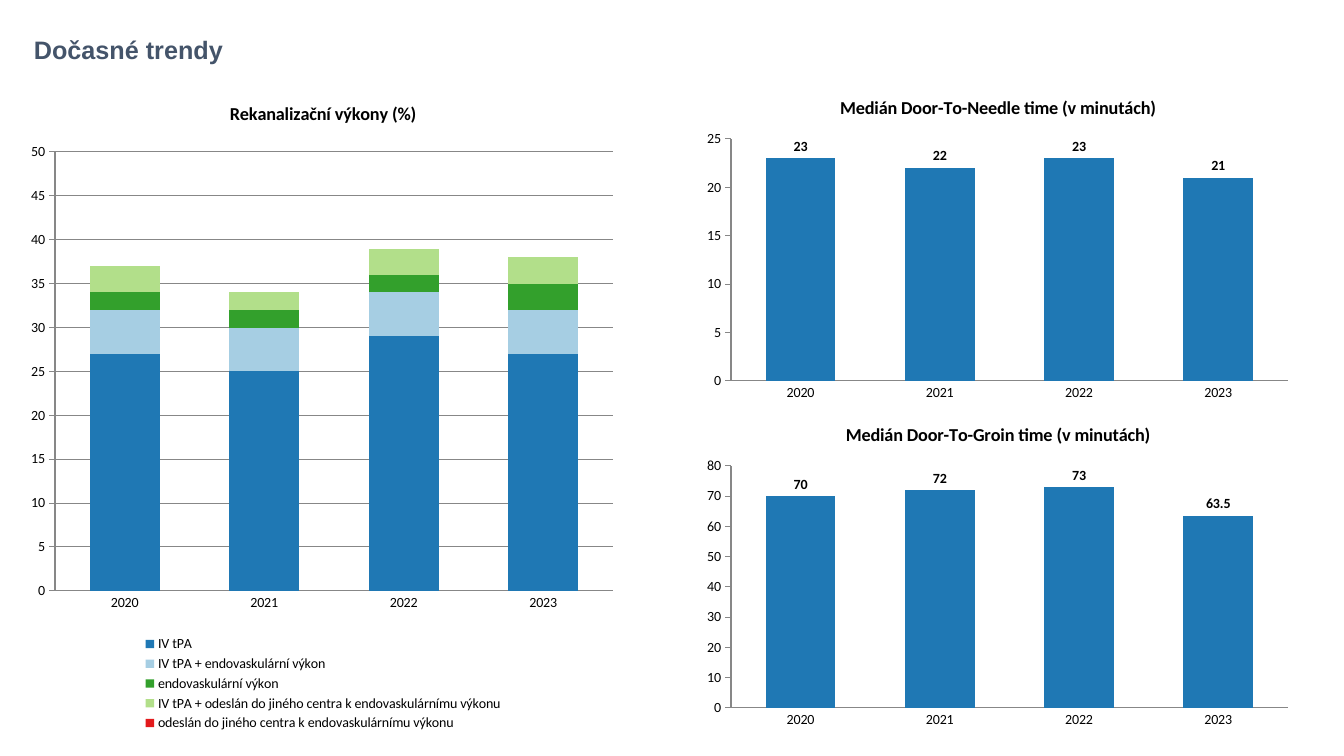
from lxml import etree
from pptx import Presentation
from pptx.chart.data import CategoryChartData
from pptx.dml.color import RGBColor
from pptx.enum.chart import XL_CHART_TYPE, XL_LABEL_POSITION, XL_LEGEND_POSITION, XL_TICK_MARK
from pptx.enum.text import MSO_ANCHOR
from pptx.oxml.ns import qn
from pptx.util import Pt

STACKED = XL_CHART_TYPE.COLUMN_STACKED
CLUSTERED = XL_CHART_TYPE.COLUMN_CLUSTERED
OUTSIDE_END = XL_LABEL_POSITION.OUTSIDE_END
LEGEND_BOTTOM = XL_LEGEND_POSITION.BOTTOM
TICK_NONE = XL_TICK_MARK.NONE
TICK_OUT = XL_TICK_MARK.OUTSIDE
MIDDLE = MSO_ANCHOR.MIDDLE

PX = 914400 / 100.8
YEARS = ["2020", "2021", "2022", "2023"]
BLUE = "1F78B4"
PROCEDURES = [
    ("IV tPA", [27, 25, 29, 27], BLUE),
    ("IV tPA + endovaskulární výkon", [5, 5, 5, 5], "A6CEE3"),
    ("endovaskulární výkon", [2, 2, 2, 3], "33A02C"),
    ("IV tPA + odeslán do jiného centra k endovaskulárnímu výkonu", [3, 2, 3, 3], "B2DF8A"),
    ("odeslán do jiného centra k endovaskulárnímu výkonu", [0, 0, 0, 0], "E31A1C"),
]
TIMES = [
    ("Medián Door-To-Needle time (v minutách)", [23, 22, 23, 21], 25, 5),
    ("Medián Door-To-Groin time (v minutách)", [70, 72, 73, 63.5], 80, 10),
]


def px(n):
    return round(n * PX)


def color(value):
    return RGBColor.from_string(value)


class SlideBuilder:
    title_font = "Arial"
    chart_font = "Calibri"
    title_color = "44546A"
    text_color = "000000"
    line_color = "878787"

    def __init__(self, prs):
        self.slide = prs.slides.add_slide(prs.slide_layouts[6])

    def style(self, font, size, bold, name, value):
        font.size = Pt(size)
        font.bold = bold
        font.name = name
        font.color.rgb = color(value)

    def chart_text(self, font, size=10, bold=False):
        self.style(font, size, bold, self.chart_font, self.text_color)

    def title(self, text, box):
        tf = self.slide.shapes.add_textbox(*map(px, box)).text_frame
        tf.word_wrap = True
        tf.vertical_anchor = MIDDLE
        p = tf.paragraphs[0]
        p.text = text
        p.line_spacing = 0.9
        self.style(p.font, 18, True, self.title_font, self.title_color)

    def place_plot(self, chart, box, plot_box):
        left, top, width, height = box
        x, y, w, h = plot_box
        area = chart.element.find(".//" + qn("c:plotArea"))
        for old in area.findall(qn("c:layout")):
            area.remove(old)
        layout = etree.Element(qn("c:layout"))
        area.insert(0, layout)
        manual = etree.SubElement(layout, qn("c:manualLayout"))
        settings = [
            ("layoutTarget", "inner"), ("xMode", "edge"), ("yMode", "edge"),
            ("x", (x - left) / width), ("y", (y - top) / height),
            ("w", w / width), ("h", h / height),
        ]
        for tag, value in settings:
            etree.SubElement(manual, qn("c:" + tag)).set("val", str(value))

    def column_chart(self, kind, title, series, box, plot_box, top_value, step):
        data = CategoryChartData()
        data.categories = YEARS
        for name, values, _ in series:
            data.add_series(name, values)
        chart = self.slide.shapes.add_chart(kind, *map(px, box), data).chart
        self.chart_text(chart.font)
        chart.has_legend = False
        chart.has_title = True
        p = chart.chart_title.text_frame.paragraphs[0]
        p.text = title
        self.chart_text(p.font, 13, True)
        plot = chart.plots[0]
        plot.gap_width = 100
        plot.vary_by_categories = False
        for bars, (_, _, fill) in zip(plot.series, series):
            bars.format.fill.solid()
            bars.format.fill.fore_color.rgb = color(fill)
        for axis in (chart.category_axis, chart.value_axis):
            axis.has_major_gridlines = False
            axis.minor_tick_mark = TICK_NONE
            axis.format.line.color.rgb = color(self.line_color)
            self.chart_text(axis.tick_labels.font)
        chart.category_axis.major_tick_mark = TICK_NONE
        axis = chart.value_axis
        axis.major_tick_mark = TICK_OUT
        axis.minimum_scale = 0
        axis.maximum_scale = top_value
        axis.major_unit = step
        axis.tick_labels.number_format = "0"
        axis.tick_labels.number_format_is_linked = False
        self.place_plot(chart, box, plot_box)
        return chart

    def stacked_chart(self, title, series, box, plot_box, top_value, step):
        chart = self.column_chart(STACKED, title, series, box, plot_box, top_value, step)
        chart.plots[0].overlap = 100
        axis = chart.value_axis
        axis.has_major_gridlines = True
        axis.major_gridlines.format.line.color.rgb = color(self.line_color)
        chart.has_legend = True
        chart.legend.position = LEGEND_BOTTOM
        chart.legend.include_in_layout = False
        self.chart_text(chart.legend.font)

    def labelled_chart(self, title, values, box, plot_box, top_value, step):
        series = [("Series 1", values, BLUE)]
        chart = self.column_chart(CLUSTERED, title, series, box, plot_box, top_value, step)
        labels = chart.plots[0].series[0].data_labels
        labels.show_value = True
        labels.position = OUTSIDE_END
        self.chart_text(labels.font, 10, True)


def main():
    prs = Presentation()
    prs.slide_width = px(1344)
    prs.slide_height = px(756)
    s = SlideBuilder(prs)
    s.title("Dočasné trendy", (24, 15, 1103, 73))
    s.stacked_chart("Rekanalizační výkony (%)", PROCEDURES,
                    (20, 80, 606, 655), (55, 152, 558, 439), 50, 5)
    for i, (title, values, top_value, step) in enumerate(TIMES):
        top = 80 + 327 * i
        s.labelled_chart(title, values, (695, top, 606, 328),
                         (731, top + 59, 557, 242), top_value, step)
    prs.save("out.pptx")


if __name__ == "__main__":
    main()
